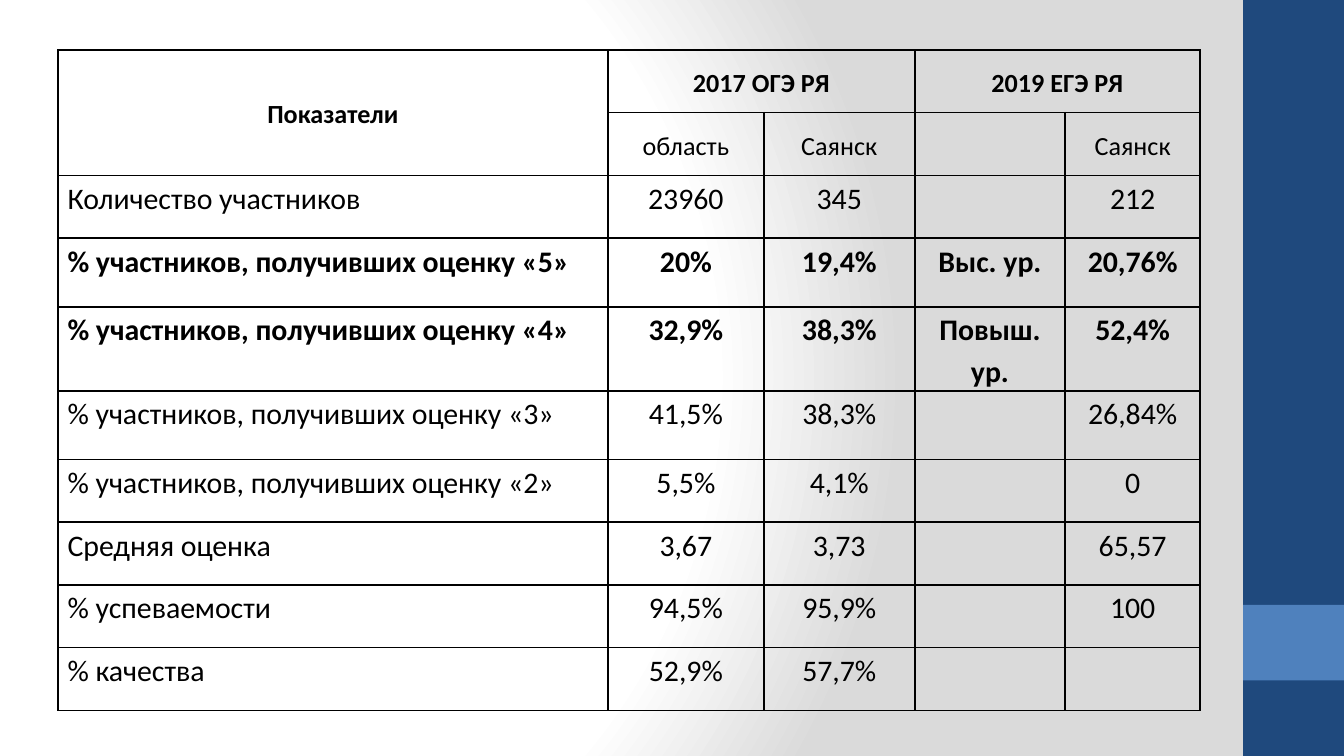
import pptx
import pptx.dml.color
import pptx.enum.shapes
import pptx.enum.text
import pptx.oxml
import pptx.oxml.ns
import pptx.util

Pt = pptx.util.Pt
RGBColor = pptx.dml.color.RGBColor
ALIGN = pptx.enum.text.PP_ALIGN
ANCHOR = pptx.enum.text.MSO_ANCHOR
NAMESPACES = pptx.oxml.ns.nsdecls("a", "p")

NAVY = RGBColor(0x1F, 0x49, 0x7D)
BLUE = RGBColor(0x4F, 0x81, 0xBD)
BLACK = RGBColor(0, 0, 0)
WHITE = RGBColor(0xFF, 0xFF, 0xFF)
GRAY = RGBColor(0xDA, 0xDA, 0xDA)

COLUMN_WIDTHS = [294.7, 83.5, 80.9, 80.6, 72.3]
ROW_HEIGHTS = [33.64] * 3 + [36.8] * 3 + [33.64] * 4
HEADER_ROWS = 2
BOLD_ROWS = {0, 3, 4}
ROWS = [
    ["Показатели", "2017 ОГЭ РЯ", "", "2019 ЕГЭ РЯ", ""],
    ["", "область", "Саянск", "", "Саянск"],
    ["Количество участников", "23960", "345", "", "212"],
    ["% участников, получивших оценку «5»", "20%", "19,4%", "Выс. ур.", "20,76%"],
    ["% участников, получивших оценку «4»", "32,9%", "38,3%", "Повыш. ур.", "52,4%"],
    ["% участников, получивших оценку «3»", "41,5%", "38,3%", "", "26,84%"],
    ["% участников, получивших оценку «2»", "5,5%", "4,1%", "", "0"],
    ["Средняя оценка", "3,67", "3,73", "", "65,57"],
    ["% успеваемости", "94,5%", "95,9%", "", "100"],
    ["% качества", "52,9%", "57,7%", "", ""],
]
MERGES = [((0, 0), (1, 0)), ((0, 1), (0, 2)), ((0, 3), (0, 4))]


class SlideBuilder:
    font_name = "Calibri"
    header_size = Pt(14)
    body_size = Pt(16)
    line_spacing = 1.15
    side_margin = Pt(5.2)
    border_width = Pt(1)

    def __init__(self, slide):
        self.slide = slide

    def background(self, stops):
        """Fill the background with a circular gradient of (percent, colour) stops."""
        stop_xml = "".join(
            f'<a:gs pos="{percent * 1000}"><a:srgbClr val="{color}"/></a:gs>'
            for percent, color in stops)
        background = pptx.oxml.parse_xml(
            f'<p:bg {NAMESPACES}><p:bgPr><a:gradFill rotWithShape="1">'
            f'<a:gsLst>{stop_xml}</a:gsLst><a:path path="circle">'
            '<a:fillToRect l="20000" t="50000" r="100000" b="50000"/></a:path>'
            '</a:gradFill><a:effectLst/></p:bgPr></p:bg>')
        self.slide.element.cSld.insert(0, background)

    def rectangle(self, left, top, width, height, color):
        shape = self.slide.shapes.add_shape(
            pptx.enum.shapes.MSO_SHAPE.RECTANGLE,
            Pt(left), Pt(top), Pt(width), Pt(height))
        shape.shadow.inherit = False
        shape.fill.solid()
        shape.fill.fore_color.rgb = color
        shape.line.fill.background()

    def borders(self, cell):
        properties = cell._tc.get_or_add_tcPr()
        for side in "LRTB":
            properties.append(pptx.oxml.parse_xml(
                f'<a:ln{side} {NAMESPACES} w="{self.border_width}"><a:solidFill>'
                f'<a:srgbClr val="{BLACK}"/></a:solidFill></a:ln{side}>'))

    def cell(self, cell, text, size, bold, alignment, anchor):
        self.borders(cell)
        cell.fill.background()
        cell.margin_left = cell.margin_right = self.side_margin
        cell.margin_top = cell.margin_bottom = 0
        cell.vertical_anchor = anchor
        if not text:
            return
        cell.text = text
        paragraph = cell.text_frame.paragraphs[0]
        paragraph.alignment = alignment
        paragraph.line_spacing = self.line_spacing
        paragraph.font.name = self.font_name
        paragraph.font.size = size
        paragraph.font.bold = bold
        paragraph.font.color.rgb = BLACK

    def table(self, left, top):
        table = self.slide.shapes.add_table(
            len(ROWS), len(COLUMN_WIDTHS), Pt(left), Pt(top),
            Pt(sum(COLUMN_WIDTHS)), Pt(sum(ROW_HEIGHTS))).table
        table.first_row = table.horz_banding = False
        for column, width in zip(table.columns, COLUMN_WIDTHS):
            column.width = Pt(width)
        for row, height in zip(table.rows, ROW_HEIGHTS):
            row.height = Pt(height)
        for start, end in MERGES:
            table.cell(*start).merge(table.cell(*end))
        for row_index, texts in enumerate(ROWS):
            header = row_index < HEADER_ROWS
            for column_index, text in enumerate(texts):
                label = column_index == 0 and not header
                self.cell(
                    table.cell(row_index, column_index), text,
                    self.header_size if header else self.body_size,
                    row_index in BOLD_ROWS,
                    ALIGN.JUSTIFY if label else ALIGN.CENTER,
                    ANCHOR.MIDDLE if header else ANCHOR.TOP)


def main():
    presentation = pptx.Presentation()
    presentation.slide_width = Pt(720)
    presentation.slide_height = Pt(405)
    builder = SlideBuilder(
        presentation.slides.add_slide(presentation.slide_layouts[6]))

    # Background and side band
    builder.background([(0, WHITE), (75, WHITE), (100, GRAY)])
    builder.rectangle(666, 0, 54, 405, NAVY)
    builder.rectangle(666, 324, 54, 40.5, BLUE)

    # Exam results
    builder.table(31, 26.7)

    presentation.save("out.pptx")


if __name__ == "__main__":
    main()
